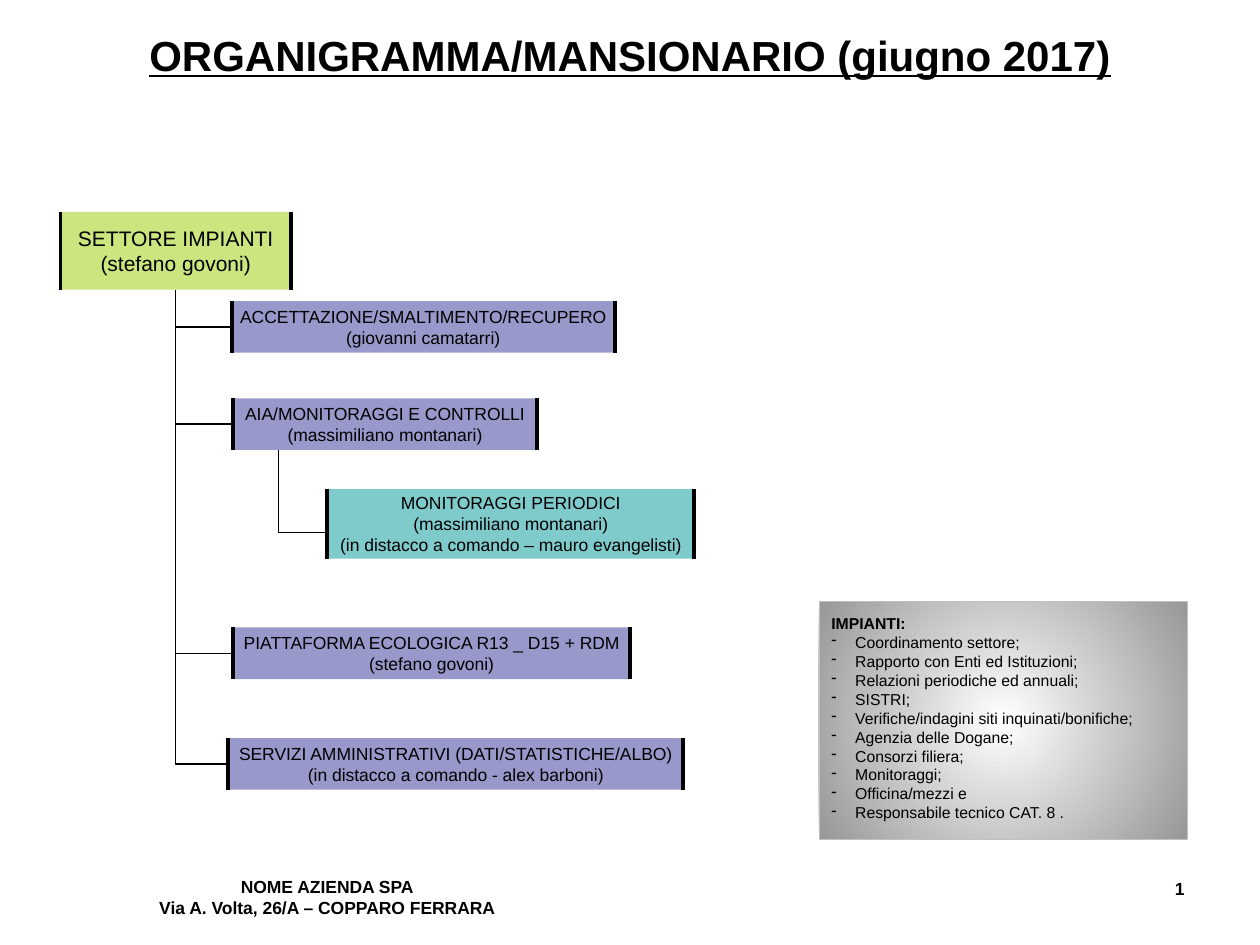
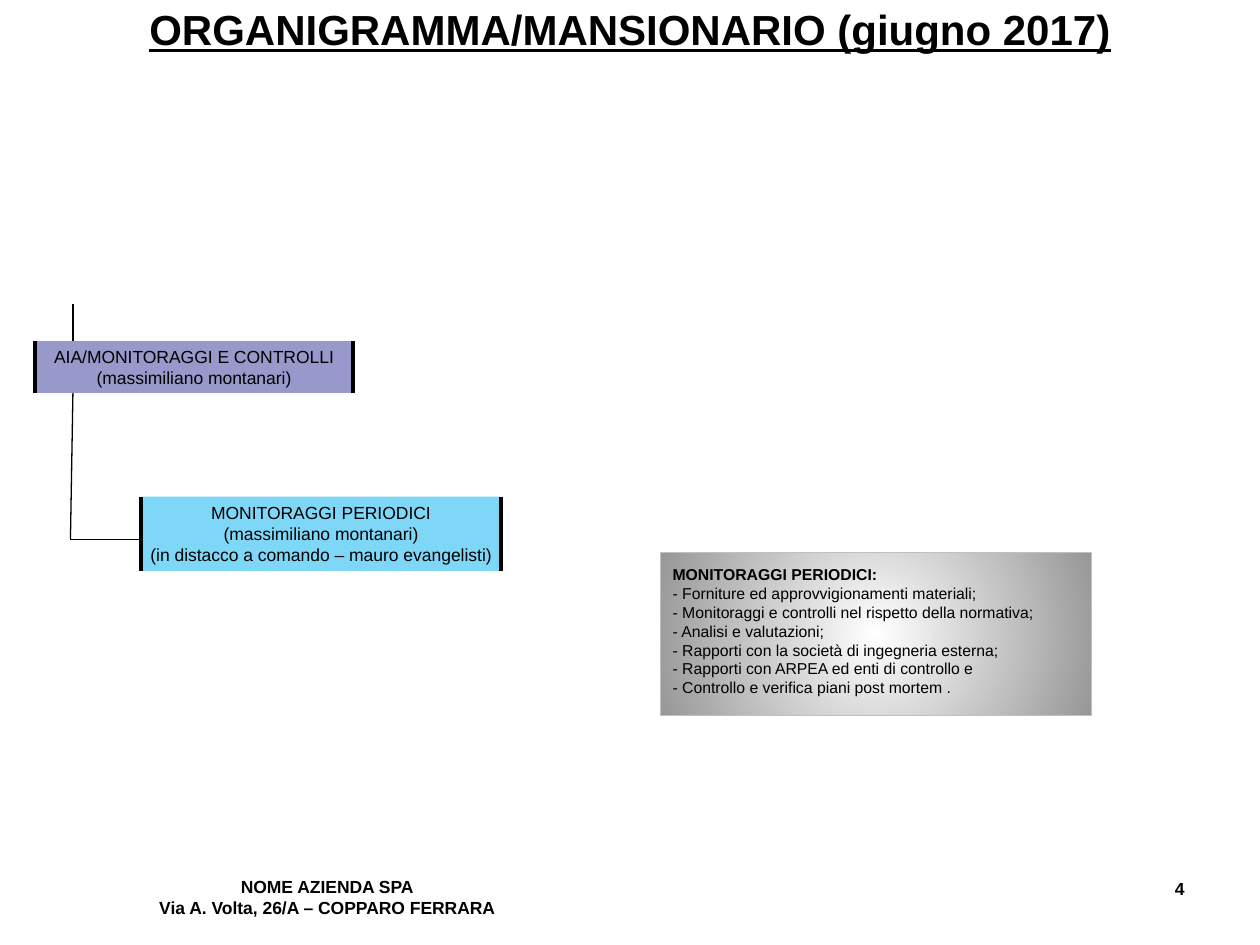
import pptx
import pptx.util
import pptx.dml.color
import pptx.enum.shapes
import pptx.enum.text
import pptx.oxml
import pptx.oxml.ns
from lxml import etree

Cm, Pt = pptx.util.Cm, pptx.util.Pt
SHAPE = pptx.enum.shapes.MSO_SHAPE
CONNECTOR = pptx.enum.shapes.MSO_CONNECTOR
ALIGN = pptx.enum.text.PP_ALIGN
ANCHOR = pptx.enum.text.MSO_ANCHOR
qn = pptx.oxml.ns.qn

# Shared look
FONT = "Arial"
COLORS = {
    "ink": "000000", "sector": "99CC00", "unit": "333399",
    "team": "009999", "team_bright": "00B0F0",
    "glow": "FFFFFF", "rim": "979797", "frame": "C0C0C0",
}
TITLE = "ORGANIGRAMMA/MANSIONARIO (giugno 2017)"
FOOTER = ["NOME AZIENDA SPA", "Via A. Volta, 26/A – COPPARO FERRARA"]
UNIT_HEIGHT = 1.04
INDENT = 0.48

# Content: every length is in centimetres
MONITORING = ["AIA/MONITORAGGI E CONTROLLI", "(massimiliano montanari)"]
PERIODIC = ["MONITORAGGI PERIODICI", "(massimiliano montanari)",
            "(in distacco a comando – mauro evangelisti)"]

SECTOR = {"lines": ["SETTORE IMPIANTI", "(stefano govoni)"],
          "at": (1.22, 4.27, 4.65, 1.57), "color": "sector", "size": 12}
# lines, left, top, width, elbow from the sector or straight from the trunk
UNITS = [
    (["ACCETTAZIONE/SMALTIMENTO/RECUPERO", "(giovanni camatarri)"],
     4.67, 6.07, 7.72, True),
    (MONITORING, 4.7, 8.03, 6.12, False),
    (["PIATTAFORMA ECOLOGICA R13 _ D15 + RDM", "(stefano govoni)"],
     4.7, 12.65, 8.0, False),
    (["SERVIZI AMMINISTRATIVI (DATI/STATISTICHE/ALBO)",
      "(in distacco a comando - alex barboni)"],
     4.6, 14.88, 9.17, True),
]
SECTOR_DUTIES = [
    "Coordinamento settore;", "Rapporto con Enti ed Istituzioni;",
    "Relazioni periodiche ed annuali;", "SISTRI;",
    "Verifiche/indagini siti inquinati/bonifiche;",
    "Agenzia delle Dogane;", "Consorzi filiera;", "Monitoraggi;",
    "Officina/mezzi e", "Responsabile tecnico CAT. 8 .",
]
PERIODIC_DUTIES = [
    "- Forniture ed approvvigionamenti materiali;",
    "- Monitoraggi e controlli nel rispetto della normativa;",
    "- Analisi e valutazioni;",
    "- Rapporti con la società di ingegneria esterna;",
    "- Rapporti con ARPEA ed enti di controllo e",
    "- Controllo e verifica piani post mortem .",
]


def rgb(name):
    return pptx.dml.color.RGBColor.from_string(COLORS[name])


def write(box, lines, size, align=ALIGN.LEFT, bold=False, underline=False):
    frame = box.text_frame
    frame.text = "\n".join(lines)
    for para in frame.paragraphs:
        para.alignment = align
        for span in para.runs:
            font = span.font
            font.name, font.size, font.bold = FONT, Pt(size), bold
            font.color.rgb = rgb("ink")
            if underline:
                font.underline = True
    return frame


def set_margins(frame, side, end):
    frame.margin_left = frame.margin_right = Cm(side)
    frame.margin_top = frame.margin_bottom = Cm(end)


def add_text(page, lines, at, size, align, underline=False):
    box = page.shapes.add_textbox(*map(Cm, at))
    frame = write(box, lines, size, align, True, underline)
    frame.word_wrap = True
    return frame


def add_box(page, lines, at, color, size=10):
    """Half-transparent chart box with a thick bar on both sides."""
    box = page.shapes.add_shape(SHAPE.DOUBLE_BRACKET, *map(Cm, at))
    box.adjustments[0] = 0
    box.shadow.inherit = False
    box.fill.solid()
    box.fill.fore_color.rgb = rgb(color)
    tint = box.fill._xPr.find(qn("a:solidFill"))[0]
    etree.SubElement(tint, qn("a:alpha")).set("val", "50000")
    box.line.color.rgb = rgb("ink")
    box.line.width = Pt(2.25)
    frame = write(box, lines, size, ALIGN.CENTER)
    frame.word_wrap = False
    frame.vertical_anchor = ANCHOR.MIDDLE
    set_margins(frame, 0.1, 0.05)


def add_duties(page, heading, duties, at, bulleted=False):
    """Panel with a radial glow that lists the duties of one unit."""
    panel = page.shapes.add_shape(SHAPE.RECTANGLE, *map(Cm, at))
    panel.shadow.inherit = False
    panel.fill.gradient()
    for stop, color, position in zip(panel.fill.gradient_stops,
                                     ("glow", "rim"), (0, 1)):
        stop.color.rgb = rgb(color)
        stop.position = position
    gradient = panel.fill._xPr.find(qn("a:gradFill"))
    gradient.remove(gradient.find(qn("a:lin")))
    circle = etree.SubElement(gradient, qn("a:path"))
    circle.set("path", "circle")
    center = etree.SubElement(circle, qn("a:fillToRect"))
    for side in "ltrb":
        center.set(side, "50000")
    panel.line.color.rgb = rgb("frame")
    panel.line.width = Pt(0.5)
    frame = write(panel, [heading] + duties, 9)
    frame.word_wrap = True
    frame.vertical_anchor = ANCHOR.TOP
    set_margins(frame, 0.25, 0.25)
    frame.paragraphs[0].runs[0].font.bold = True
    if bulleted:
        for para in frame.paragraphs[1:]:
            settings = para._p.get_or_add_pPr()
            settings.set("marL", str(Cm(INDENT)))
            settings.set("indent", str(-Cm(INDENT)))
            etree.SubElement(settings, qn("a:buChar")).set("char", "-")


def add_line(page, start, end, kind=CONNECTOR.STRAIGHT):
    line = page.shapes.add_connector(kind, *map(Cm, start + end))
    line.line.color.rgb = rgb("ink")
    line.line.width = Pt(0.75)
    etree.SubElement(line._element.spPr, qn("a:effectLst"))
    return line


def add_elbow(page, top, end):
    """Line that drops from top and then turns right to end."""
    line = add_line(page, top, end, CONNECTOR.ELBOW)
    shape_settings = line._element.spPr
    shape_settings.find(qn("a:prstGeom")).set("prst", "bentConnector2")
    shape_settings.find(qn("a:xfrm")).set("rot", str(180 * 60000))


def add_page(deck, number, title_height):
    page = deck.slides.add_slide(deck.slide_layouts[6])
    title = add_text(page, [TITLE], (1.27, 0.76, 22.86, title_height),
                     24, ALIGN.CENTER, True)
    title.vertical_anchor = ANCHOR.BOTTOM
    add_text(page, FOOTER, (2.57, 17.53, 8.05, 1.09), 10, ALIGN.CENTER)
    add_text(page, [str(number)], (18.21, 17.58, 5.92, 1.09), 10, ALIGN.RIGHT)
    return page


def build_sector_page(deck):
    page = add_page(deck, 1, 0.97)
    left, top, width, height = SECTOR["at"]
    trunk = (left + width / 2, top + height)

    # Sector and its units
    for lines, unit_left, unit_top, unit_width, is_elbow in UNITS:
        middle = unit_top + UNIT_HEIGHT / 2
        if is_elbow:
            add_elbow(page, trunk, (unit_left, middle))
        else:
            add_line(page, (trunk[0], middle), (unit_left, middle))
        add_box(page, lines, (unit_left, unit_top, unit_width, UNIT_HEIGHT),
                "unit")
    add_box(page, SECTOR["lines"], SECTOR["at"], SECTOR["color"],
            SECTOR["size"])

    # Team below the monitoring unit
    add_elbow(page, (5.61, UNITS[1][2] + UNIT_HEIGHT), (6.6, 10.74))
    add_box(page, PERIODIC, (6.6, 9.86, 7.39, 1.4), "team")
    add_duties(page, "IMPIANTI:", SECTOR_DUTIES, (16.51, 12.12, 7.42, 4.8),
               bulleted=True)


def build_monitoring_page(deck):
    page = add_page(deck, 4, 0.46)
    unit_top, team_left, joint = 6.88, 2.84, (1.42, 10.87)
    stem = 1.47

    # Unit and its team
    add_line(page, (stem, 6.12), (stem, unit_top))
    add_line(page, (stem, unit_top + UNIT_HEIGHT), joint)
    add_line(page, joint, (team_left, joint[1]))
    add_box(page, MONITORING, (0.71, unit_top, 6.4, UNIT_HEIGHT), "unit")
    add_box(page, PERIODIC, (team_left, 10.01, 7.26, 1.5), "team_bright")
    add_duties(page, "MONITORAGGI PERIODICI:", PERIODIC_DUTIES,
               (13.31, 11.13, 8.69, 3.3))


def main():
    deck = pptx.Presentation()
    deck.slide_width, deck.slide_height = Cm(25.4), Cm(19.05)
    build_sector_page(deck)
    build_monitoring_page(deck)
    deck.save("out.pptx")


if __name__ == "__main__":
    main()
